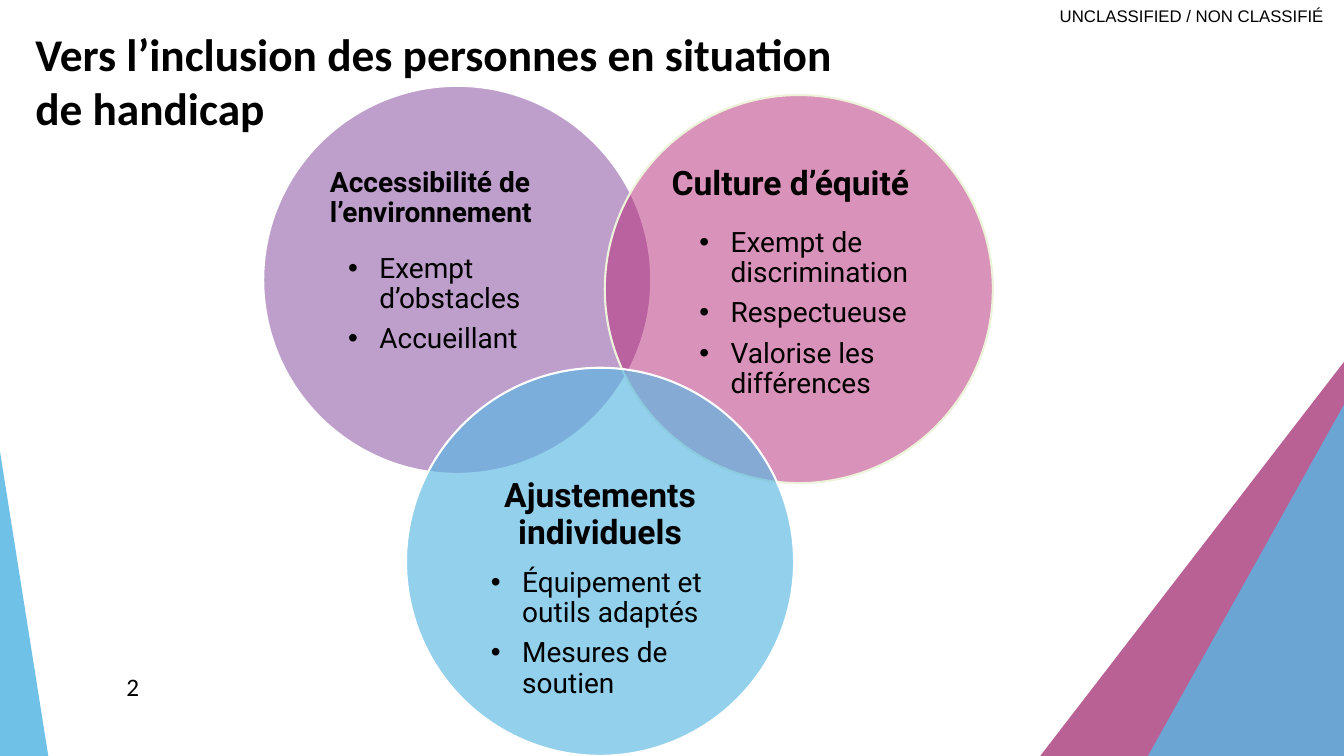
from lxml.etree import SubElement
from pptx import Presentation
from pptx.dml.color import RGBColor
from pptx.enum.shapes import MSO_SHAPE as SHAPE
from pptx.enum.text import MSO_ANCHOR as ANCHOR, MSO_AUTO_SIZE as FIT, PP_ALIGN as ALIGN
from pptx.oxml.ns import qn
from pptx.util import Pt

BLACK = RGBColor(0x00, 0x00, 0x00)
WHITE = RGBColor(0xFF, 0xFF, 0xFF)
CREAM = RGBColor(0xED, 0xF3, 0xDA)
BLUE = RGBColor(0x58, 0xB7, 0xE3)
PURPLE = RGBColor(0x7F, 0x3F, 0x98)
PINK = RGBColor(0xB5, 0x27, 0x75)
BERRY = RGBColor(0x9E, 0x24, 0x6B)

WIDTH, HEIGHT = 960, 540
DIAMETER = 277.2
HANG = 22.3

CIRCLES = [
    dict(offset=(0, 0), color=PURPLE, opacity=50, line=WHITE, insets=(3.6, 29.6),
         heading="Accessibilité de l’environnement", size=20, align=ALIGN.LEFT,
         before=0, after=18, indent=35.3,
         items=["Exempt d’obstacles", "Accueillant"]),
    dict(offset=(244, 6.6), color=PINK, opacity=50, line=CREAM, insets=(0, 8.6),
         heading="Culture d’équité", size=24, align=ALIGN.LEFT,
         before=0, after=18, indent=42.2,
         items=["Exempt de discrimination", "Respectueuse", "Valorise les différences"]),
    dict(offset=(102, 201.4), color=BLUE, opacity=65, line=WHITE, insets=(42.5, 3.6),
         heading="Ajustements individuels", size=24, align=ALIGN.CENTER,
         before=12, after=12, indent=35.3,
         items=["Équipement et outils adaptés", "Mesures de soutien"]),
]


def add_run(p, text, font, size, bold=False):
    """Add one black run to a paragraph."""
    r = p.add_run()
    r.text = text
    r.font.name, r.font.size, r.font.bold = font, Pt(size), bold
    r.font.color.rgb = BLACK


def fill_shape(sp, color, opacity):
    """Give a shape a translucent fill and no shadow."""
    sp.shadow.inherit = False
    sp.fill.solid()
    sp.fill.fore_color.rgb = color
    clr = sp.fill._xPr.find(qn("a:solidFill")).find(qn("a:srgbClr"))
    SubElement(clr, qn("a:alpha"), val=str(opacity * 1000))


def add_bullet(p, indent):
    """Turn a paragraph into a bullet with a hanging indent."""
    pPr = p._p.get_or_add_pPr()
    pPr.set("marL", str(Pt(indent)))
    pPr.set("indent", str(-Pt(HANG)))
    SubElement(pPr, qn("a:buFont"), typeface="Arial")
    SubElement(pPr, qn("a:buChar"), char="•")


def add_corners(s, left, top, width, height):
    """Set right-angled triangles in the bottom corners of the box."""
    for w, h, apex, color, opacity in [
        (217, 281.5, 1, BERRY, 72),
        (140, 251, 1, BLUE, 80),
        (34.5, 217.5, 0, BLUE, 85),
    ]:
        x = left + apex * (width - w)
        sp = s.shapes.add_shape(SHAPE.ISOSCELES_TRIANGLE, Pt(x), Pt(top + height - h), Pt(w), Pt(h))
        sp.adjustments[0] = apex
        fill_shape(sp, color, opacity)
        sp.line.fill.background()


def add_title(s, left, top, width, height):
    """Place the slide title in the box."""
    sp = s.shapes.title
    sp.left, sp.top, sp.width, sp.height = Pt(left), Pt(top), Pt(width), Pt(height)
    tf = sp.text_frame
    tf.word_wrap, tf.auto_size, tf.vertical_anchor = True, FIT.NONE, ANCHOR.TOP
    p = tf.paragraphs[0]
    p.alignment = ALIGN.LEFT
    add_run(p, "Vers l’inclusion des personnes en situation de handicap", "Calibri", 32.4, True)


def add_label(s, left, top, width, height, text, font, size, inset):
    """Place one right-aligned line of text, centred vertically in the box."""
    tf = s.shapes.add_textbox(Pt(left), Pt(top), Pt(width), Pt(height)).text_frame
    tf.word_wrap, tf.vertical_anchor = True, ANCHOR.MIDDLE
    tf.margin_left = tf.margin_right = Pt(inset)
    tf.margin_top = tf.margin_bottom = Pt(inset / 2)
    p = tf.paragraphs[0]
    p.alignment = ALIGN.RIGHT
    add_run(p, text, font, size)


def add_circle(s, left, top, circle):
    """Draw one circle with its heading and bullets."""
    sp = s.shapes.add_shape(SHAPE.OVAL, Pt(left), Pt(top), Pt(DIAMETER), Pt(DIAMETER))
    fill_shape(sp, circle["color"], circle["opacity"])
    sp.line.color.rgb, sp.line.width = circle["line"], Pt(1.5)
    tf = sp.text_frame
    tf.word_wrap, tf.vertical_anchor = True, ANCHOR.MIDDLE
    tf.margin_top, tf.margin_bottom = map(Pt, circle["insets"])
    p = tf.paragraphs[0]
    p.alignment, p.line_spacing = circle["align"], 0.9
    p.space_before, p.space_after = Pt(circle["before"]), Pt(circle["after"])
    add_run(p, circle["heading"], "Roboto", circle["size"], True)
    for item in circle["items"]:
        p = tf.add_paragraph()
        p.alignment, p.line_spacing, p.space_after = ALIGN.LEFT, 0.9, Pt(7.2)
        add_bullet(p, circle["indent"])
        add_run(p, item, "Roboto", 20)


def add_venn(s, left, top):
    """Draw the three overlapping circles from the given corner."""
    for circle in CIRCLES:
        dx, dy = circle["offset"]
        add_circle(s, left + dx, top + dy, circle)


def main():
    """Build and save the slide."""
    prs = Presentation()
    prs.slide_width, prs.slide_height = Pt(WIDTH), Pt(HEIGHT)
    s = prs.slides.add_slide(prs.slide_layouts[5])
    add_corners(s, 0, 0, WIDTH, HEIGHT)
    add_label(s, 742.5, 0, 217.5, 22.5, "UNCLASSIFIED / NON CLASSIFIÉ", "Arial", 12, 14.4)
    add_title(s, 18, 15, 598.3, 39.6)
    add_venn(s, 188, 61.3)
    add_label(s, 52.5, 476, 54, 28.8, "2", "Calibri", 18, 7.2)
    prs.save("out.pptx")


if __name__ == "__main__":
    main()
